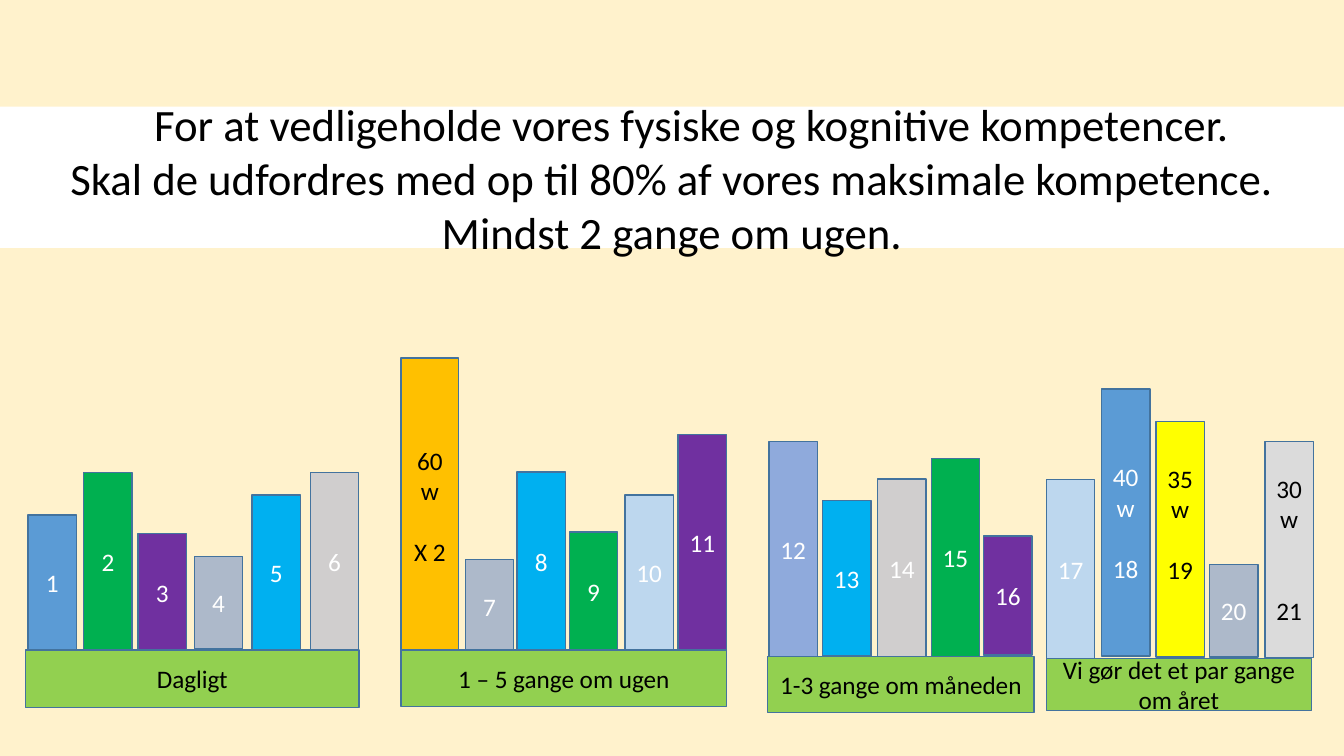
from dataclasses import dataclass

from pptx import Presentation
from pptx.dml.color import RGBColor
from pptx.enum.shapes import MSO_SHAPE as Shape
from pptx.enum.text import MSO_ANCHOR as Anchor, PP_ALIGN as Align
from pptx.shapes.autoshape import Shape as AutoShape
from pptx.slide import Slide
from pptx.util import Cm, Pt


@dataclass(frozen=True)
class Theme:
    font: str = "Calibri"
    title_size: int = 32
    body_size: int = 18
    body_line: int = 22
    background: str = "FFF2CC"
    outline: str = "43739E"
    label: str = "92D050"
    white: str = "FFFFFF"
    black: str = "000000"
    blue: str = "5B9BD5"
    green: str = "00B050"
    purple: str = "7030A0"
    slate: str = "ADB9CA"
    sky: str = "00B0F0"
    grey: str = "D0CECE"
    light_grey: str = "DBDBDB"
    orange: str = "FFC000"
    pale_blue: str = "BDD7EE"
    periwinkle: str = "8FAADC"
    yellow: str = "FFFF00"


T = Theme()
SLIDE_W, SLIDE_H = 33.87, 19.05
TITLE = (
    "For at vedligeholde vores fysiske og kognitive kompetencer.\n"
    "Skal de udfordres med op til 80% af vores maksimale kompetence.\n"
    "Mindst 2 gange om ugen."
)


@dataclass(frozen=True)
class Box:
    left: float
    top: float
    width: float
    height: float


@dataclass(frozen=True)
class Bar:
    left: float
    top: float
    height: float
    fill: str
    text: str
    color: str = T.white
    width: float = 1.22
    gap_lines: int = 1  # empty lines between two paragraphs
    lift_lines: int = 0  # empty lines kept below the text


@dataclass(frozen=True)
class Group:
    label: str
    box: Box
    bars: list[Bar]


GROUPS = [
    Group("Dagligt", Box(0.64, 16.38, 8.41, 1.45), [
        Bar(0.71, 12.98, 3.4, T.blue, "1"),
        Bar(2.11, 11.91, 4.5, T.green, "2"),
        Bar(3.48, 13.44, 3, T.purple, "3"),
        Bar(4.9, 14.02, 2.34, T.slate, "4"),
        Bar(6.35, 12.47, 3.91, T.sky, "5"),
        Bar(7.82, 11.91, 4.5, T.grey, "6"),
    ]),
    Group("1 – 5 gange om ugen", Box(10.11, 16.38, 8.2, 1.42), [
        Bar(10.11, 9.02, 7.47, T.orange, "60 w\nX 2", T.black, width=1.45),
        Bar(11.73, 14.1, 2.34, T.slate, "7"),
        Bar(13.03, 11.89, 4.5, T.sky, "8"),
        Bar(14.35, 13.41, 3, T.green, "9"),
        Bar(15.75, 12.47, 3.91, T.pale_blue, "10"),
        Bar(17.09, 10.95, 5.44, T.purple, "11"),
    ]),
    Group("1-3 gange om måneden", Box(19.35, 16.54, 6.71, 1.42), [
        Bar(19.38, 11.13, 5.44, T.periwinkle, "12"),
        Bar(20.73, 12.62, 3.91, T.sky, "13"),
        Bar(22.12, 12.07, 4.5, T.grey, "14"),
        Bar(23.47, 11.56, 4.98, T.green, "15"),
        Bar(24.79, 13.51, 3, T.purple, "16"),
    ]),
    Group("Vi gør det et par gange om året", Box(26.37, 16.59, 6.68, 1.32), [
        Bar(26.37, 12.09, 4.5, T.pale_blue, "17"),
        Bar(27.76, 9.8, 6.73, T.blue, "40 w\n18"),
        Bar(29.13, 10.62, 5.94, T.yellow, "35 w\n19", T.black, lift_lines=1),
        Bar(30.48, 14.22, 2.34, T.slate, "20"),
        Bar(31.88, 11.13, 5.44, T.light_grey, "30 w\n21", T.black, gap_lines=2),
    ]),
]


def add_box(s: Slide, box: Box, fill: str, text: str, color: str = T.black,
            size: int = T.body_size, outline: str | None = T.outline) -> AutoShape:
    sp = s.shapes.add_shape(Shape.RECTANGLE, Cm(box.left), Cm(box.top),
                            Cm(box.width), Cm(box.height))
    sp.shadow.inherit = False
    sp.fill.solid()
    sp.fill.fore_color.rgb = RGBColor.from_string(fill)
    if outline:
        sp.line.color.rgb = RGBColor.from_string(outline)
        sp.line.width = Pt(1)
    else:
        sp.line.fill.background()
    tf = sp.text_frame
    tf.text = text
    tf.word_wrap = True
    tf.vertical_anchor = Anchor.MIDDLE
    for p in tf.paragraphs:
        p.alignment = Align.CENTER
        for r in p.runs:
            r.font.name = T.font
            r.font.size = Pt(size)
            r.font.color.rgb = RGBColor.from_string(color)
    return sp


def add_bar(s: Slide, bar: Bar) -> None:
    box = Box(bar.left, bar.top, bar.width, bar.height)
    tf = add_box(s, box, bar.fill, bar.text, bar.color).text_frame
    for p in tf.paragraphs[1:]:
        p.space_before = Pt(T.body_line * bar.gap_lines)
    tf.margin_bottom += Pt(T.body_line * bar.lift_lines)


def add_title(s: Slide) -> None:
    band = Box(0, 2.69, SLIDE_W, 3.56)
    sp = add_box(s, band, T.white, TITLE, size=T.title_size, outline=None)
    first_line = sp.text_frame.paragraphs[0]
    first_line._p.get_or_add_pPr().set("marL", str(Cm(1)))


def main() -> None:
    prs = Presentation()
    prs.slide_width, prs.slide_height = Cm(SLIDE_W), Cm(SLIDE_H)
    s = prs.slides.add_slide(prs.slide_layouts[6])
    s.background.fill.solid()
    s.background.fill.fore_color.rgb = RGBColor.from_string(T.background)
    for group in GROUPS:
        for bar in group.bars:
            add_bar(s, bar)
        add_box(s, group.box, T.label, group.label)
    add_title(s)
    prs.save("out.pptx")


if __name__ == "__main__":
    main()
